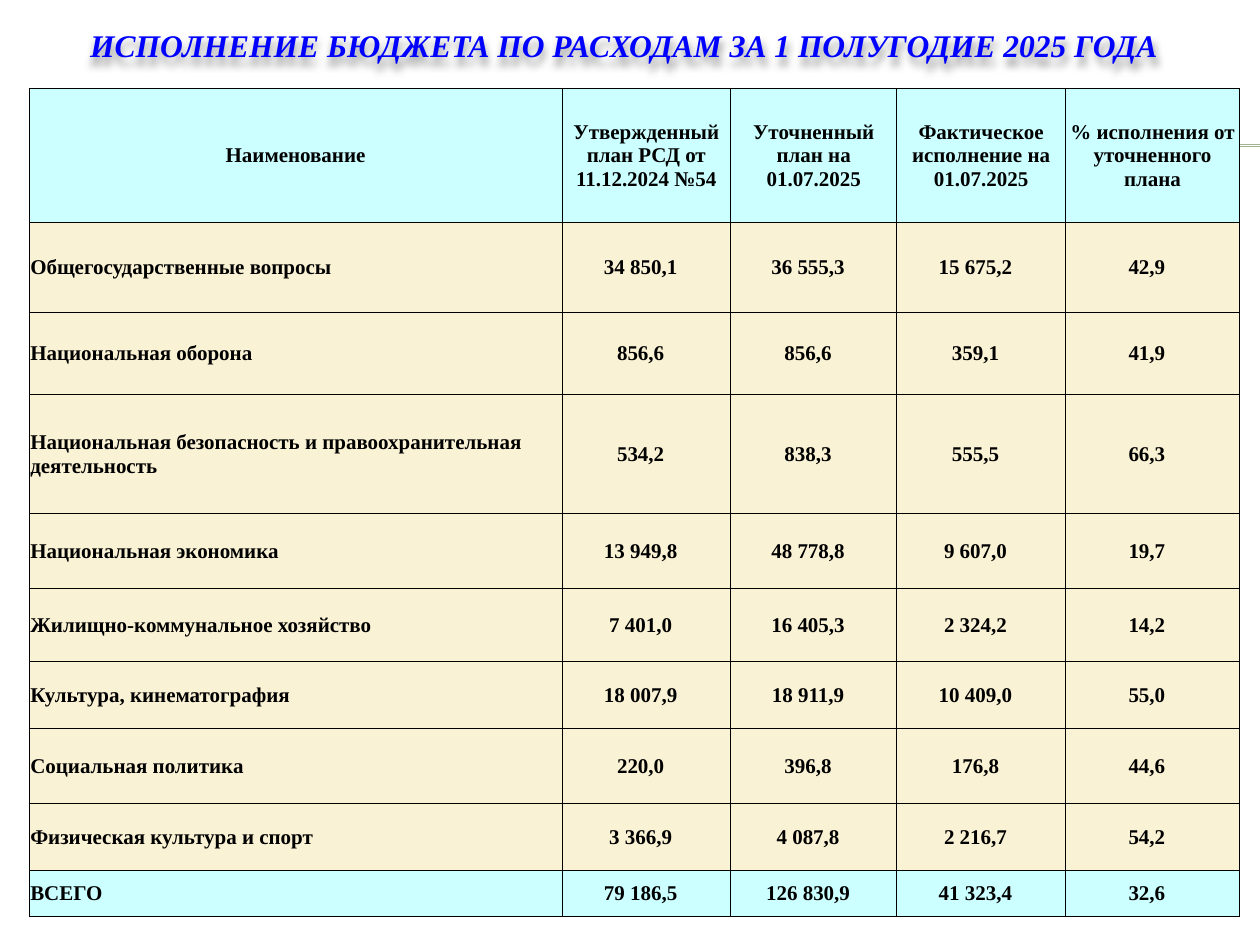
from lxml import etree
from pptx import Presentation
from pptx import util as u
from pptx.dml.color import RGBColor
from pptx.enum import shapes, text
from pptx.oxml.ns import qn

TITLE = "ИСПОЛНЕНИЕ БЮДЖЕТА ПО РАСХОДАМ ЗА 1 ПОЛУГОДИЕ 2025 ГОДА"
HEADER = (
    "Наименование",
    "Утвержденный план РСД от 11.12.2024 №54",
    "Уточненный план на 01.07.2025",
    "Фактическое исполнение на 01.07.2025",
    "% исполнения от уточненного плана",
)
EXPENSES = [
    ("Общегосударственные вопросы", "34 850,1", "36 555,3", "15 675,2", "42,9"),
    ("Национальная оборона", "856,6", "856,6", "359,1", "41,9"),
    ("Национальная безопасность и правоохранительная деятельность",
     "534,2", "838,3", "555,5", "66,3"),
    ("Национальная экономика", "13 949,8", "48 778,8", "9 607,0", "19,7"),
    ("Жилищно-коммунальное хозяйство", "7 401,0", "16 405,3", "2 324,2", "14,2"),
    ("Культура, кинематография", "18 007,9", "18 911,9", "10 409,0", "55,0"),
    ("Социальная политика", "220,0", "396,8", "176,8", "44,6"),
    ("Физическая культура и спорт", "3 366,9", "4 087,8", "2 216,7", "54,2"),
]
TOTAL = ("ВСЕГО", "79 186,5", "126 830,9", "41 323,4", "32,6")

COLUMN_WIDTHS = (10.74, 3.4, 3.35, 3.4, 3.51)
ROW_HEIGHTS = (2.7, 1.82, 1.65, 2.4, 1.52, 1.47, 1.34, 1.52, 1.34, 0.94)
TABLE_LEFT, TABLE_TOP = 0.59, 1.78
RULE_LEFT, RULE_RIGHT, RULE_TOPS = 1.42, 25.4, (2.92, 2.95)
CELL_INSET, NUMBER_INSET = 0.02, 0.25

THEME = {
    "font": "Times New Roman",
    "title_size": 18,
    "table_size": 12,
    "rule_width": 0.75,
    "border_width": 0.5,
    "title": "0000FF",
    "text": "000000",
    "accent_fill": "CCFFFF",
    "body_fill": "FAF2D4",
    "border": "000000",
    "rule": "A5B592",
}


def color(name):
    return RGBColor.from_string(THEME[name])


def format_runs(paragraph, size, color_name, italic=False):
    for run in paragraph.runs:
        run.font.name = THEME["font"]
        run.font.size = u.Pt(THEME[size])
        run.font.bold = True
        run.font.italic = italic
        run.font.color.rgb = color(color_name)


def add_title(slide):
    title = slide.shapes.title
    title.left, title.top = u.Cm(0.58), u.Cm(0.41)
    title.width, title.height = u.Cm(24), u.Cm(1)
    frame = title.text_frame
    frame.text = TITLE
    frame.word_wrap = True
    frame.auto_size = text.MSO_AUTO_SIZE.NONE
    frame.vertical_anchor = text.MSO_ANCHOR.MIDDLE
    paragraph = frame.paragraphs[0]
    paragraph.alignment = text.PP_ALIGN.CENTER
    format_runs(paragraph, "title_size", "title", italic=True)
    effects = etree.SubElement(title.element.spPr, qn("a:effectLst"))
    shadow = etree.SubElement(effects, qn("a:outerShdw"), blurRad=str(u.Pt(4)),
                              dist=str(u.Pt(3)), dir="5400000", algn="t", rotWithShape="0")
    shade = etree.SubElement(shadow, qn("a:srgbClr"), val=THEME["text"])
    etree.SubElement(shade, qn("a:alpha"), val="40000")


def add_rules(slide):
    for top in RULE_TOPS:
        rule = slide.shapes.add_connector(
            shapes.MSO_CONNECTOR.STRAIGHT,
            u.Cm(RULE_LEFT), u.Cm(top), u.Cm(RULE_RIGHT), u.Cm(top))
        rule.line.color.rgb = color("rule")
        rule.line.width = u.Pt(THEME["rule_width"])
        etree.SubElement(rule.element.spPr, qn("a:effectLst"))


def add_borders(cell):
    properties = cell._tc.get_or_add_tcPr()
    for side in ("lnL", "lnR", "lnT", "lnB"):
        line = etree.SubElement(properties, qn(f"a:{side}"),
                                w=str(u.Pt(THEME["border_width"])))
        fill = etree.SubElement(line, qn("a:solidFill"))
        etree.SubElement(fill, qn("a:srgbClr"), val=THEME["border"])


def format_cell(cell, fill_name, centered, is_number):
    add_borders(cell)
    cell.fill.solid()
    cell.fill.fore_color.rgb = color(fill_name)
    cell.vertical_anchor = text.MSO_ANCHOR.MIDDLE
    cell.margin_left = cell.margin_top = u.Cm(CELL_INSET)
    cell.margin_right = u.Cm(NUMBER_INSET if is_number else CELL_INSET)
    cell.margin_bottom = 0
    paragraph = cell.text_frame.paragraphs[0]
    paragraph.alignment = text.PP_ALIGN.CENTER if centered else text.PP_ALIGN.LEFT
    format_runs(paragraph, "table_size", "text")


def add_budget_table(slide):
    rows = [HEADER, *EXPENSES, TOTAL]
    table = slide.shapes.add_table(
        len(rows), len(HEADER), u.Cm(TABLE_LEFT), u.Cm(TABLE_TOP),
        u.Cm(sum(COLUMN_WIDTHS)), u.Cm(sum(ROW_HEIGHTS))).table
    for column, width in zip(table.columns, COLUMN_WIDTHS):
        column.width = u.Cm(width)
    for row, height in zip(table.rows, ROW_HEIGHTS):
        row.height = u.Cm(height)
    for row_index, values in enumerate(rows):
        is_header = row_index == 0
        fill_name = "accent_fill" if values in (HEADER, TOTAL) else "body_fill"
        for column_index, value in enumerate(values):
            cell = table.cell(row_index, column_index)
            cell.text_frame.text = value
            is_number = not is_header and column_index > 0
            format_cell(cell, fill_name, is_header or is_number, is_number)


def main():
    presentation = Presentation()
    presentation.slide_width, presentation.slide_height = u.Cm(25.4), u.Cm(19.05)
    slide = presentation.slides.add_slide(presentation.slide_layouts[5])
    add_title(slide)
    add_rules(slide)
    add_budget_table(slide)
    presentation.save("out.pptx")


if __name__ == "__main__":
    main()
